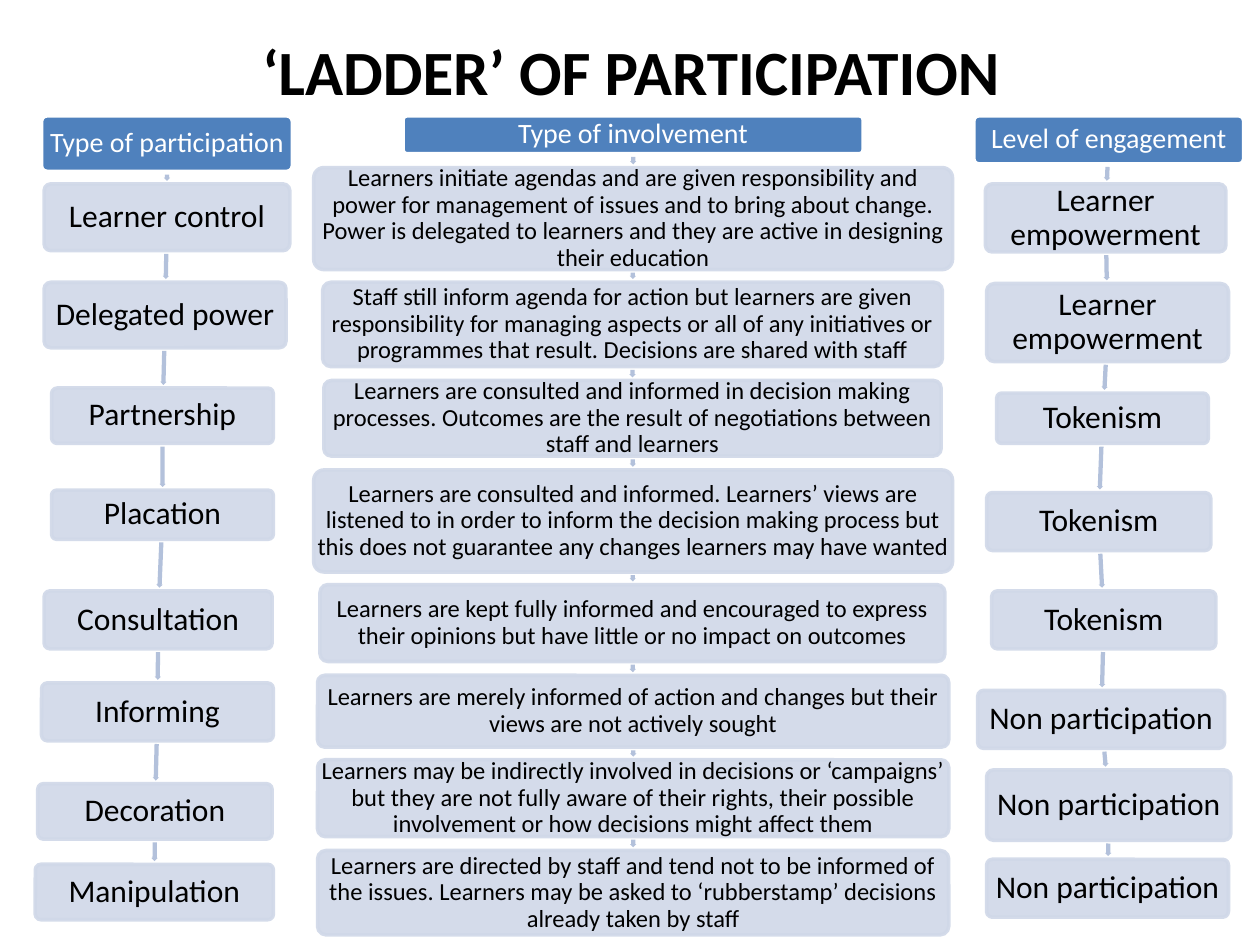
"""Build the ladder of participation slide with three columns of linked boxes."""
import math

import pptx
import pptx.util
import pptx.dml.color
import pptx.enum.shapes
import pptx.enum.text
import pptx.oxml

SCALE = 9144
COLOURS = {"head": "4F81BD", "step": "D0D8E8", "arrow": "B3C1DB", "white": "FFFFFF", "black": "000000"}

TYPES = [
    (33, 92, 199, 44, "Type of participation"),
    (35, 146, 195, 53, "Learner control"),
    (35, 224, 192, 52, "Delegated power"),
    (41, 308, 176, 44, "Partnership"),
    (41, 389, 176, 39, "Placation"),
    (35, 469, 181, 46, "Consultation"),
    (33, 542, 184, 46, "Informing"),
    (30, 622, 186, 44, "Decoration"),
    (28, 686, 189, 44, "Manipulation"),
]
INVOLVEMENT = [
    (320, 92, 365, 30, "Type of involvement"),
    (249, 133, 507, 81, "Learners initiate agendas and are given responsibility and power for management of "
     "issues and to bring about change. Power is delegated to learners and they are active in designing "
     "their education"),
    (256, 224, 492, 67, "Staff still inform agenda for action but learners are given responsibility for "
     "managing aspects or all of any initiatives or programmes that result. Decisions are shared with staff"),
    (257, 302, 490, 60, "Learners are consulted and informed in decision making processes. Outcomes are the "
     "result of negotiations between staff and learners"),
    (249, 373, 507, 81, "Learners are consulted and informed. Learners’ views are listened to in order to "
     "inform the decision making process but this does not guarantee any changes learners may have wanted"),
    (254, 464, 496, 61, "Learners are kept fully informed and encouraged to express their opinions but have "
     "little or no impact on outcomes"),
    (252, 536, 501, 57, "Learners are merely informed of action and changes but their views are not actively "
     "sought"),
    (252, 603, 501, 61, "Learners may be indirectly involved in decisions or ‘campaigns’ but they are not "
     "fully aware of their rights, their possible involvement or how decisions might affect them"),
    (252, 675, 501, 67, "Learners are directed by staff and tend not to be informed of the issues. Learners "
     "may be asked to ‘rubberstamp’ decisions already taken by staff"),
]
ENGAGEMENT = [
    (773, 92, 214, 38, "Level of engagement"),
    (782, 146, 191, 54, "Learner empowerment"),
    (783, 225, 192, 62, "Learner empowerment"),
    (791, 312, 168, 40, "Tokenism"),
    (783, 391, 178, 46, "Tokenism"),
    (787, 469, 178, 46, "Tokenism"),
    (776, 548, 196, 46, "Non participation"),
    (783, 611, 194, 56, "Non participation"),
    (783, 682, 192, 46, "Non participation"),
]


def px(length):
    """Turn px into EMU."""
    return pptx.util.Emu(round(length * SCALE))


def rgb(name):
    """Return the named colour."""
    return pptx.dml.color.RGBColor.from_string(COLOURS[name])


def write_text(frame, text, *, size, colour="black", bold=False, spacing=None):
    """Write one centred paragraph into a text frame."""
    frame.word_wrap = True
    frame.auto_size = pptx.enum.text.MSO_AUTO_SIZE.NONE
    frame.vertical_anchor = pptx.enum.text.MSO_ANCHOR.MIDDLE
    para = frame.paragraphs[0]
    para.alignment = pptx.enum.text.PP_ALIGN.CENTER
    para.line_spacing = spacing
    span = para.add_run()
    span.text = text
    span.font.name = "Calibri"
    span.font.size = pptx.util.Pt(size)
    span.font.bold = bold
    span.font.color.rgb = rgb(colour)


def fade(fill, percent):
    """Make a solid fill partly opaque."""
    for colour in fill.iter(pptx.oxml.ns.qn("a:srgbClr")):
        alpha = pptx.oxml.parse_xml(f'<a:alpha {pptx.oxml.ns.nsdecls("a")} val="{percent * 1000}"/>')
        colour.append(alpha)


class Ladder:
    """Hold the style and the current slide."""

    def __init__(self, page):
        """Keep the slide and the shared sizes."""
        self.page = page
        self.head_size = 16
        self.arrow_width = 5
        self.shapes = pptx.enum.shapes.MSO_SHAPE

    def title(self, text):
        """Place the title."""
        box = self.page.shapes.title
        box.left, box.top, box.width, box.height = map(px, (51, 29, 900, 54))
        write_text(box.text_frame, text, size=36, bold=True)

    def shape(self, kind, left, top, width, height, fill):
        """Add a filled preset shape without shadow."""
        shape = self.page.shapes.add_shape(kind, px(left), px(top), px(width), px(height))
        shape.shadow.inherit = False
        shape.fill.solid()
        shape.fill.fore_color.rgb = rgb(fill)
        return shape

    def box(self, left, top, width, height, text, size, head=False):
        """Add a rounded header or step box."""
        box = self.shape(self.shapes.ROUNDED_RECTANGLE, left, top, width, height, "head" if head else "step")
        box.adjustments[0] = 0.1
        box.line.color.rgb = rgb("white" if head else "step")
        box.line.width = pptx.util.Pt(2)
        if not head:
            fade(box.element.spPr, 90)
        frame = box.text_frame
        frame.margin_left = frame.margin_right = 0
        frame.margin_top = frame.margin_bottom = px(2)
        write_text(frame, text, size=size, colour="white" if head else "black", spacing=0.9)

    def arrow(self, upper, lower):
        """Add an arrow in the gap between two boxes, aimed from centre to centre."""
        (x1, y1), (x2, y2) = [(b[0] + b[2] / 2, b[1] + b[3] / 2) for b in (upper, lower)]
        bottom = upper[1] + upper[3]
        thick = self.arrow_width
        length = max(lower[1] - bottom - 5, thick)
        left = (x1 + x2 - length) / 2
        top = (bottom + lower[1] - thick) / 2
        arrow = self.shape(self.shapes.RIGHT_ARROW, left, top, length, thick, "arrow")
        arrow.adjustments[0] = 0.67
        arrow.adjustments[1] = 0.5
        arrow.line.fill.background()
        arrow.rotation = math.degrees(math.atan2(y2 - y1, x2 - x1))

    def column(self, boxes, size):
        """Add a header, its steps and the arrows between them."""
        self.box(*boxes[0], self.head_size, head=True)
        for upper, lower in zip(boxes, boxes[1:]):
            self.arrow(upper, lower)
            self.box(*lower, size)


def main():
    """Build and save the deck."""
    deck = pptx.Presentation()
    deck.slide_width, deck.slide_height = px(1000), px(750)
    ladder = Ladder(deck.slides.add_slide(deck.slide_layouts[5]))
    ladder.title("‘LADDER’ OF PARTICIPATION")
    for boxes, size in ((TYPES, 18), (INVOLVEMENT, 14), (ENGAGEMENT, 18)):
        ladder.column(boxes, size)
    deck.save("out.pptx")


if __name__ == "__main__":
    main()
